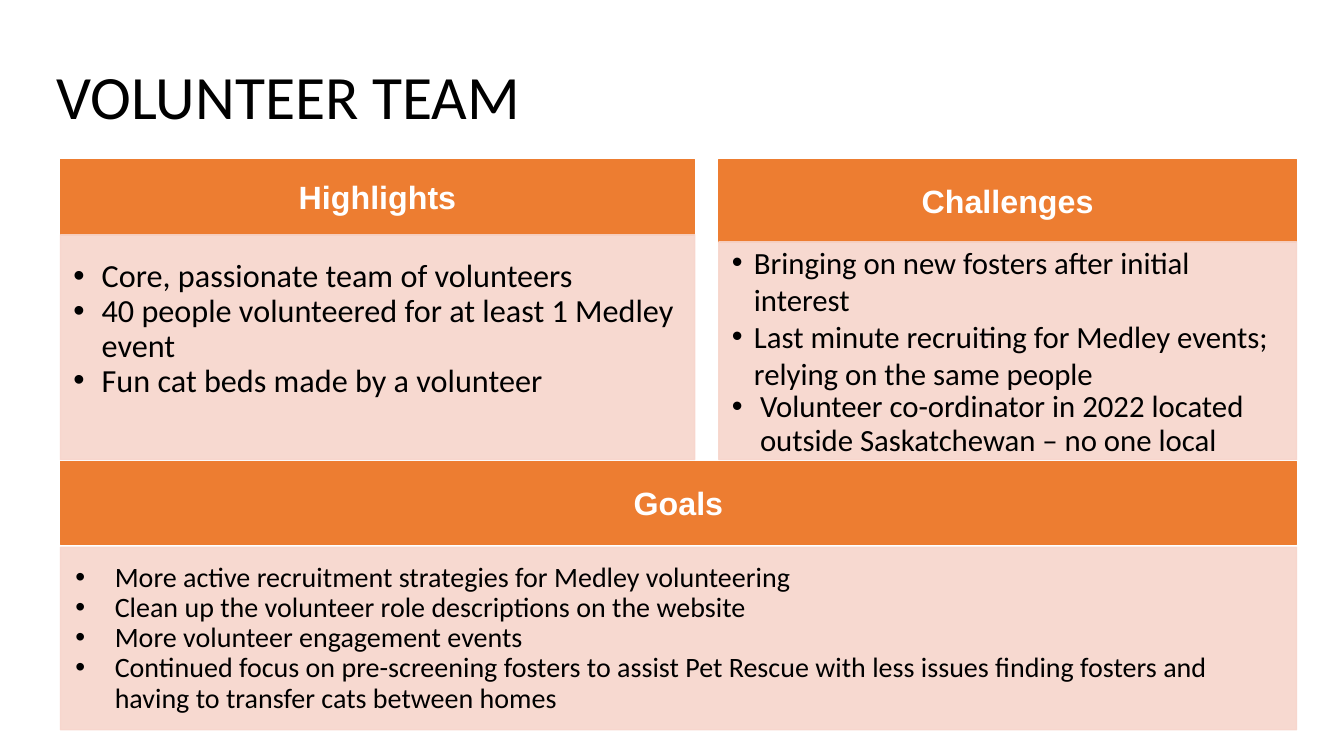
import pptx
import pptx.util
import pptx.dml.color
import pptx.enum.shapes
import pptx.enum.text
import pptx.oxml.ns
import lxml.etree

Inches, Pt = pptx.util.Inches, pptx.util.Pt

# Content
TITLE = "VOLUNTEER TEAM"
NARROW, MEDIUM, WIDE = (0.25, 0.22), (0.31, 0.28), (0.44, 0.39)  # margin, hang
# Bullets: text, indent, line spacing
PANELS = [
    {
        "heading": "Goals", "left": 0.6, "top": 4.58, "width": 12.26,
        "head_height": 0.82, "gap": 0.03, "body_height": 1.81,
        "size": 20, "bottom_inset": 0.1,
        "bullets": [
            ("More active recruitment strategies for Medley volunteering", WIDE, 0.9),
            ("Clean up the volunteer role descriptions on the website", WIDE, 0.9),
            ("More volunteer engagement events", WIDE, 0.9),
            ("Continued focus on pre-screening fosters to assist Pet Rescue with less "
             "issues finding fosters and having to transfer cats between homes", WIDE, 0.9),
        ],
    },
    {
        "heading": "Challenges", "left": 7.13, "top": 1.58, "width": 5.73,
        "head_height": 0.82, "gap": 0, "body_height": 2.16,
        "size": 22, "bottom_inset": 0.1,
        "bullets": [
            ("Bringing on new fosters after initial interest", NARROW, 1.0),
            ("Last minute recruiting for Medley events; relying on the same people",
             NARROW, 1.0),
            ("Volunteer co-ordinator in 2022 located outside Saskatchewan – no one local",
             MEDIUM, 0.9),
        ],
    },
    {
        "heading": "Highlights", "left": 0.6, "top": 1.58, "width": 6.29,
        "head_height": 0.75, "gap": 0, "body_height": 2.23,
        "size": 23, "bottom_inset": 0.45,
        "bullets": [
            ("Core, passionate team of volunteers", MEDIUM, 0.9),
            ("40 people volunteered for at least 1 Medley event", MEDIUM, 0.9),
            ("Fun cat beds made by a volunteer", MEDIUM, 0.9),
        ],
    },
]
ORANGE, PEACH, WHITE, BLACK = "ED7D31", "F7D5CB", "FFFFFF", "000000"


def paint(color_format, color, alpha=None):
    color_format.rgb = pptx.dml.color.RGBColor.from_string(color)
    if alpha:
        for rgb in color_format._xFill.iter(pptx.oxml.ns.qn("a:srgbClr")):
            lxml.etree.SubElement(rgb, pptx.oxml.ns.qn("a:alpha"), val=str(alpha * 1000))


def prepare_frame(frame, side, top, bottom):
    frame.word_wrap = True
    frame.vertical_anchor = pptx.enum.text.MSO_ANCHOR.MIDDLE
    frame.margin_left = frame.margin_right = Inches(side)
    frame.margin_top, frame.margin_bottom = Inches(top), Inches(bottom)


def add_run(paragraph, text, size, font, color, bold=False):
    run = paragraph.add_run()
    run.text = text
    run.font.size, run.font.name, run.font.bold = Pt(size), font, bold
    paint(run.font.color, color)


def add_block(slide, left, top, width, height, color, alpha=None, bottom_inset=0.1):
    block = slide.shapes.add_shape(
        pptx.enum.shapes.MSO_SHAPE.RECTANGLE,
        Inches(left), Inches(top), Inches(width), Inches(height))
    block.shadow.inherit = False
    block.fill.solid()
    block.line.fill.solid()
    block.line.width = Pt(1)
    paint(block.fill.fore_color, color, alpha)
    paint(block.line.fill.fore_color, color, alpha)
    prepare_frame(block.text_frame, 0.1, 0.1, bottom_inset)
    return block.text_frame


def add_bullet(paragraph, indent):
    margin, hang = indent
    props = paragraph._p.get_or_add_pPr()
    props.set("marL", str(Inches(margin)))
    props.set("indent", str(-Inches(hang)))
    qn = pptx.oxml.ns.qn
    bullet_color = lxml.etree.SubElement(props, qn("a:buClr"))
    lxml.etree.SubElement(bullet_color, qn("a:srgbClr"), val=BLACK)
    lxml.etree.SubElement(props, qn("a:buFont"), typeface="Arial")
    lxml.etree.SubElement(props, qn("a:buChar"), char="•")


def add_panel(slide, panel):
    left, top, width = panel["left"], panel["top"], panel["width"]

    # Heading band
    heading = add_block(slide, left, top, width, panel["head_height"], ORANGE).paragraphs[0]
    heading.alignment = pptx.enum.text.PP_ALIGN.CENTER
    add_run(heading, panel["heading"], 23, "Arial", WHITE, bold=True)

    # Bulleted body
    body_top = top + panel["head_height"] + panel["gap"]
    body = add_block(slide, left, body_top, width, panel["body_height"], PEACH,
                     alpha=89, bottom_inset=panel["bottom_inset"])
    for index, (text, indent, spacing) in enumerate(panel["bullets"]):
        paragraph = body.add_paragraph() if index else body.paragraphs[0]
        paragraph.alignment = pptx.enum.text.PP_ALIGN.LEFT
        paragraph.line_spacing = spacing
        paragraph.space_before = paragraph.space_after = Pt(0)
        add_bullet(paragraph, indent)
        add_run(paragraph, text, panel["size"], "Calibri", BLACK)


def main():
    deck = pptx.Presentation()
    deck.slide_width, deck.slide_height = Inches(13.33), Inches(7.5)
    slide = deck.slides.add_slide(deck.slide_layouts[6])

    # Title
    title = slide.shapes.add_textbox(Inches(0.46), Inches(0.26), Inches(11.5), Inches(1.45))
    prepare_frame(title.text_frame, 0.1, 0.05, 0.05)
    title_line = title.text_frame.paragraphs[0]
    title_line.line_spacing = 0.9
    add_run(title_line, TITLE, 44, "Calibri", BLACK)

    # Panels
    for panel in PANELS:
        add_panel(slide, panel)
    deck.save("out.pptx")


if __name__ == "__main__":
    main()
